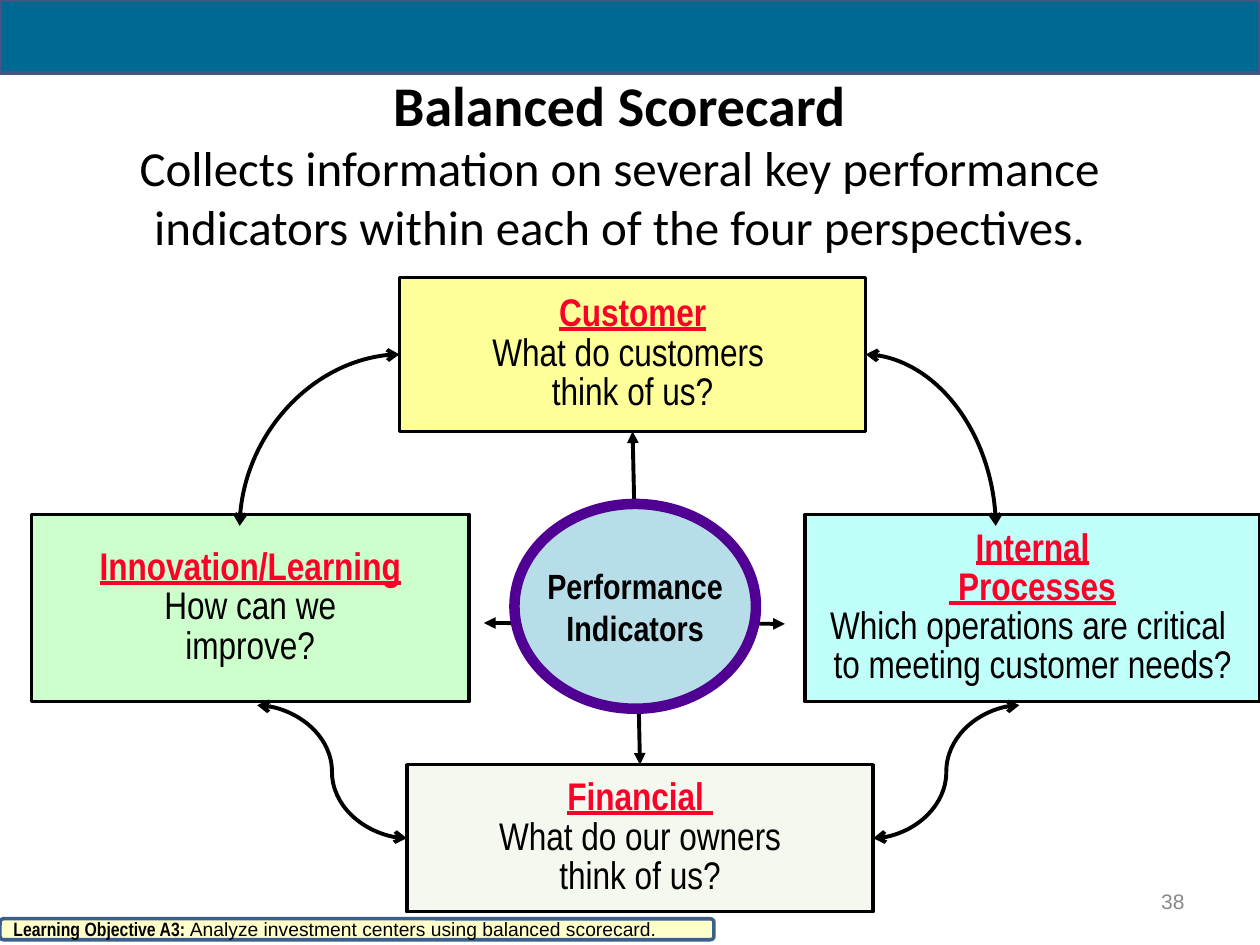
import pptx
import pptx.util
import pptx.dml.color
import pptx.enum.shapes
import pptx.enum.text
import pptx.oxml
import pptx.oxml.ns
from lxml import etree

Pt = pptx.util.Pt
Shape = pptx.enum.shapes.MSO_SHAPE
Link = pptx.enum.shapes.MSO_CONNECTOR
Align = pptx.enum.text.PP_ALIGN
Anchor = pptx.enum.text.MSO_ANCHOR
qn = pptx.oxml.ns.qn

COLORS = {
    "bar": "006991", "edge": "445583", "black": "000000", "red": "FC0128",
    "green": "CCFFCC", "aqua": "C0FEF9", "cream": "F5F8EE", "yellow": "FFFF99",
    "sky": "B7DEE8", "purple": "500093", "note": "FFFFCC", "navy": "3A5F8C",
    "gray": "898989",
}
NARROW = "Arial Narrow"


def rgb(name):
    return pptx.dml.color.RGBColor.from_string(COLORS[name])


def write(para, text, size=22, font=NARROW, color="black", bold=False, under=False):
    """Add text to a paragraph, with a line break at each newline."""
    for i, part in enumerate(text.split("\n")):
        if i:
            para.add_line_break()
        if not part:
            continue
        run = para.add_run()
        run.text = part
        run.font.size = Pt(size)
        run.font.name = font
        run.font.bold = bold
        run.font.underline = under
        run.font.color.rgb = rgb(color)


def setup(frame, align=Align.CENTER, wrap=True):
    """Prepare a text frame and return its first paragraph."""
    frame.word_wrap = wrap
    frame.auto_size = pptx.enum.text.MSO_AUTO_SIZE.NONE
    frame.vertical_anchor = Anchor.MIDDLE
    para = frame.paragraphs[0]
    para.alignment = align
    return para


def block(slide, kind, box, fill, line, width):
    shape = slide.shapes.add_shape(kind, *map(Pt, box))
    shape.shadow.inherit = False
    shape.fill.solid()
    shape.fill.fore_color.rgb = rgb(fill)
    shape.line.color.rgb = rgb(line)
    shape.line.width = Pt(width)
    return shape


def arrow(slide, start, end, kind=Link.STRAIGHT, tip="triangle"):
    """Draw a black connector with a tip at both ends."""
    link = slide.shapes.add_connector(kind, *map(Pt, start + end))
    link.line.color.rgb = rgb("black")
    link.line.width = Pt(2.25)
    line = link.line._get_or_add_ln()
    for tag in ("a:headEnd", "a:tailEnd"):
        etree.SubElement(line, qn(tag), type=tip)
    etree.SubElement(link._element.spPr, qn("a:effectLst"))
    return link


def curve(slide, start, end, bend=False):
    """Draw a curved arrow: one quarter bend, or an S shape."""
    link = arrow(slide, start, end, Link.CURVE, "arrow")
    if bend:
        link._element.spPr.find(qn("a:prstGeom")).set("prst", "curvedConnector2")


def card(slide, box, fill, head, *body):
    """Place a perspective; a head ending in a newline shares its paragraph with the body."""
    shape = block(slide, Shape.RECTANGLE, box, fill, "black", 2)
    frame = shape.text_frame
    para = setup(frame, wrap=False)
    write(para, head, color="red", bold=True, under=True)
    for i, text in enumerate(body):
        if i or not head.endswith("\n"):
            para = frame.add_paragraph()
        write(para, text)
    for para in frame.paragraphs:
        para.alignment = Align.CENTER
        para.line_spacing = 0.85
    return shape


def heading(slide, box):
    title = slide.shapes.title
    title.left, title.top, title.width, title.height = map(Pt, box)
    para = setup(title.text_frame)
    write(para, "Balanced Scorecard\n", size=32, font="Calibri", bold=True)
    write(para, "Collects information on several key performance indicators "
          "within each of the four perspectives.", size=28, font="Calibri")


def diagram(slide, box):
    """Place four perspectives around the hub, with their arrows."""
    x, y, w, h = box
    right = x + w
    mid, side = y + 135.5, 107
    top = (x + 210.25, y, 266.5, 88)
    base = (x + 214.5, y + h - 84, 266.5, 84)

    customer = card(slide, top, "yellow", "Customer",
                    "What do customers ", "think of us?")
    money = card(slide, base, "cream", "Financial ",
                 "What do our owners", "think of us?")
    card(slide, (x, mid, 250, side), "green", "Innovation/Learning\n",
         "How can we\nimprove?")
    card(slide, (right - 260, mid, 260, side), "aqua", "Internal\n Processes",
         "Which operations are critical ", "to meeting customer needs?")

    spine = arrow(slide, (x + 344, y + 88), (x + 348, y + h - 84))
    spine.begin_connect(customer, 2)
    spine.end_connect(money, 0)
    arrow(slide, (x + 258.5, mid + 62), (x + 430.5, mid + 62.5))

    hub = block(slide, Shape.OVAL, (x + 276, mid - 6, 138, 117), "sky", "purple", 6)
    write(setup(hub.text_frame, wrap=False), "Performance\nIndicators",
          size=20, bold=True)

    for (left, head, wide, tall), ends, level, bend in (
        (top, (x + 119, right - 151), mid + 6.5, True),
        (base, (x + 129, right - 137.5), mid + side + 2, False),
    ):
        for start, end in zip((left, left + wide), ends):
            curve(slide, (start, head + tall / 2), (end, level), bend)


def footer(slide, box):
    x, y, w, h = box
    page = slide.shapes.add_textbox(*map(Pt, (x + 516, y, 168, 29)))
    write(setup(page.text_frame, Align.RIGHT), "38", size=12, font="Arial", color="gray")
    goal = block(slide, Shape.ROUNDED_RECTANGLE, (x, y + h - 12, 408, 12),
                 "note", "navy", 2)
    para = setup(goal.text_frame, Align.LEFT)
    write(para, "Learning Objective A3: ", size=11, bold=True)
    write(para, "Analyze investment centers using balanced scorecard.",
          size=11, font="Arial")


def main():
    deck = pptx.Presentation()
    deck.slide_width, deck.slide_height = Pt(720), Pt(540)
    slide = deck.slides.add_slide(deck.slide_layouts[5])
    block(slide, Shape.RECTANGLE, (0, 0, 720, 42), "bar", "edge", 2.25)
    heading(slide, (18, 48, 672, 90))
    diagram(slide, (18, 158.5, 702, 362.5))
    footer(slide, (0, 500.5, 720, 36.5))
    deck.save("out.pptx")


if __name__ == "__main__":
    main()
